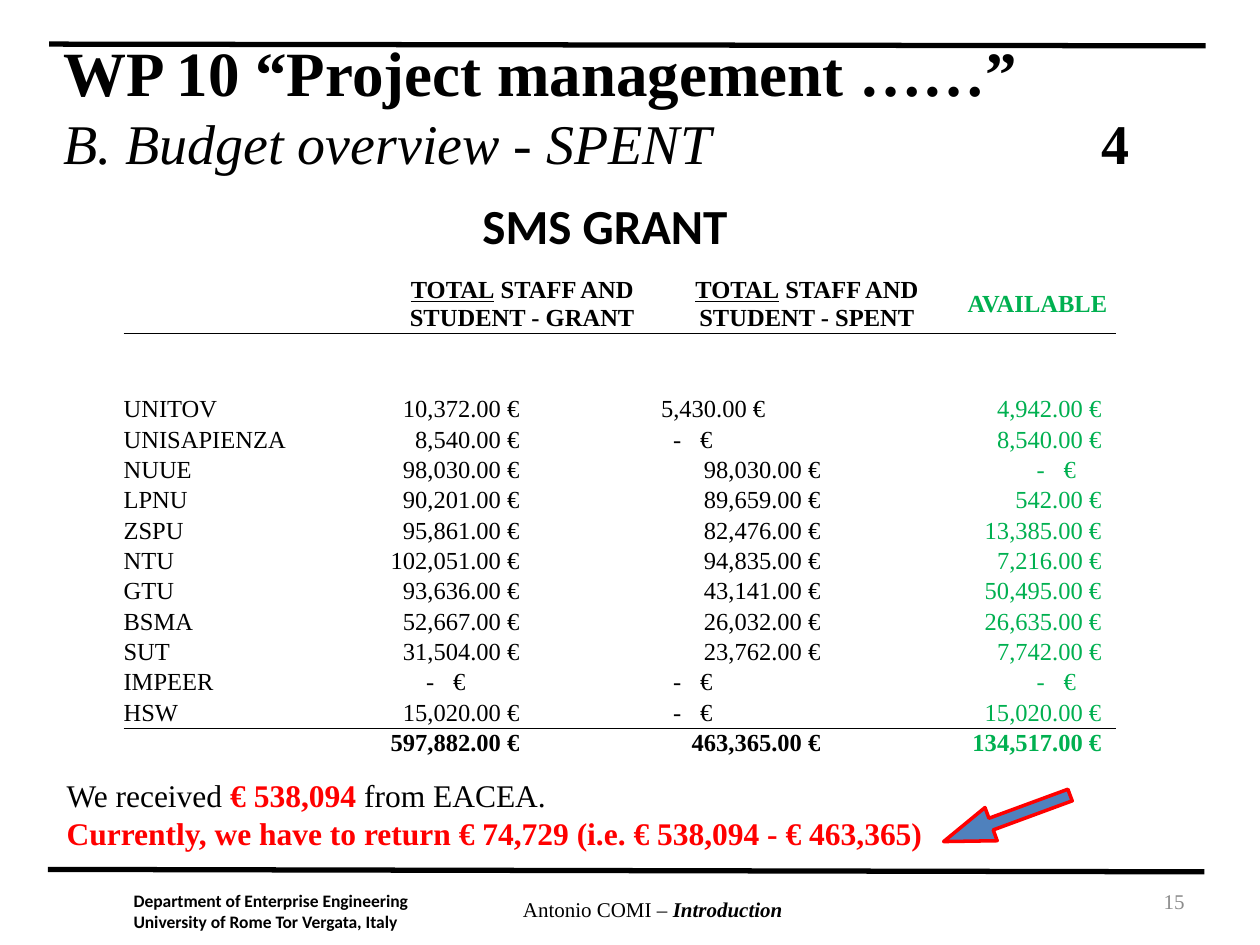
"""Builds the budget overview slide for the project management work package."""
from dataclasses import dataclass

from lxml.etree import SubElement
from pptx import Presentation
from pptx.dml.color import RGBColor
from pptx.enum.shapes import MSO_CONNECTOR, MSO_SHAPE
from pptx.enum.text import MSO_ANCHOR, MSO_AUTO_SIZE, PP_ALIGN
from pptx.oxml.ns import qn
from pptx.util import Pt


@dataclass(frozen=True)
class Theme:
    serif: str = "Times New Roman"
    sans: str = "Calibri"
    black: str = "000000"
    white: str = "FFFFFF"
    red: str = "FF0000"
    green: str = "00B050"
    blue: str = "4F81BD"
    gray: str = "8C8C8C"
    title: int = 36
    subtitle: int = 32
    heading: int = 28
    body: int = 18
    table: int = 14
    footer: int = 12
    small: int = 10


THEME = Theme()
NO_STYLE = "{2D5ABB26-0587-4C30-8999-92F81FD0307C}"
COLUMN_WIDTHS = (151.9, 151.9, 173.5, 90)
ROW_HEIGHTS = (33, 34.8) + (17.34,) * 12
TOP_BORDERS = {1: 1, 13: 0.5}
BOTTOM_BORDERS = {0: 1, 12: 0.5}
RIGHT_MARGINS = (77.5, 79, 8.5)
DASH_MARGINS = (21, 10.3, 44.5)
UNITOV_SPENT_MARGIN = 110.5
EURO_TAB = 15.4
BUDGET = (
    ("UNITOV", 10372, 5430),
    ("UNISAPIENZA", 8540, 0),
    ("NUUE", 98030, 98030),
    ("LPNU", 90201, 89659),
    ("ZSPU", 95861, 82476),
    ("NTU", 102051, 94835),
    ("GTU", 93636, 43141),
    ("BSMA", 52667, 26032),
    ("SUT", 31504, 23762),
    ("IMPEER", 0, 0),
    ("HSW", 15020, 0),
)


class SlideBuilder:
    def __init__(self, slide, theme):
        self.slide = slide
        self.theme = theme

    def run(self, paragraph, text, size, color=None, bold=False, italic=False,
            underline=False, face=None):
        run = paragraph.add_run()
        run.text = text
        font = run.font
        font.name = face or self.theme.serif
        font.size = Pt(size)
        font.color.rgb = RGBColor.from_string(color or self.theme.black)
        font.bold, font.italic, font.underline = bold, italic, underline

    def tab(self, paragraph, position):
        tabs = SubElement(paragraph._p.get_or_add_pPr(), qn("a:tabLst"))
        SubElement(tabs, qn("a:tab"), pos=str(int(Pt(position))), algn="l")

    def rule(self, left, top, right, bottom):
        line = self.slide.shapes.add_connector(
            MSO_CONNECTOR.STRAIGHT, Pt(left), Pt(top), Pt(right), Pt(bottom))
        line.line.color.rgb = RGBColor.from_string(self.theme.black)
        line.line.width = Pt(3)
        SubElement(line._element.spPr, qn("a:effectLst"))

    def title(self, left, top, width, height):
        shape = self.slide.shapes.title
        shape.left, shape.top = Pt(left), Pt(top)
        shape.width, shape.height = Pt(width), Pt(height)
        frame = shape.text_frame
        frame.auto_size = MSO_AUTO_SIZE.NONE
        frame.vertical_anchor = MSO_ANCHOR.MIDDLE
        paragraph = frame.paragraphs[0]
        paragraph.alignment = PP_ALIGN.LEFT
        self.tab(paragraph, 593.3)
        self.run(paragraph, "WP 10 “Project management ……”", self.theme.title, bold=True)
        paragraph.add_line_break()
        self.run(paragraph, "B. Budget overview - SPENT\t", self.theme.subtitle, italic=True)
        self.run(paragraph, "4", self.theme.subtitle, bold=True)

    def text(self, box, lines, align=PP_ALIGN.LEFT, anchor=MSO_ANCHOR.TOP,
             inset=True, fill=None):
        bounds = [Pt(value) for value in box]
        if fill:
            shape = self.slide.shapes.add_shape(MSO_SHAPE.RECTANGLE, *bounds)
            shape.shadow.inherit = False
            shape.fill.solid()
            shape.fill.fore_color.rgb = RGBColor.from_string(fill)
            shape.line.fill.background()
        else:
            shape = self.slide.shapes.add_textbox(*bounds)
        frame = shape.text_frame
        frame.word_wrap = True
        frame.vertical_anchor = anchor
        if not inset:
            frame.margin_left = frame.margin_right = 0
            frame.margin_top = frame.margin_bottom = 0
        for index, runs in enumerate(lines):
            paragraph = frame.add_paragraph() if index else frame.paragraphs[0]
            paragraph.alignment = align
            for words, style in runs:
                self.run(paragraph, words, **style)

    def border(self, cell, side, width):
        line = SubElement(cell._tc.get_or_add_tcPr(), qn(f"a:{side}"), w=str(int(Pt(width))))
        if width:
            fill = SubElement(line, qn("a:solidFill"))
            SubElement(fill, qn("a:srgbClr"), val=self.theme.black)
        else:
            SubElement(line, qn("a:noFill"))

    def amount(self, cell, value, column, bold=False, right=None):
        paragraph = cell.text_frame.paragraphs[0]
        color = self.theme.green if column == 2 else self.theme.black
        if value:
            cell.margin_right = Pt(right or RIGHT_MARGINS[column])
            paragraph.alignment = PP_ALIGN.RIGHT
            text = f"{value:,.2f} €"
        else:
            cell.margin_left = Pt(DASH_MARGINS[column])
            self.tab(paragraph, EURO_TAB)
            text = "-\t€"
        self.run(paragraph, text, self.theme.table, color, bold)

    def table(self, left, top):
        table = self.slide.shapes.add_table(
            len(ROW_HEIGHTS), len(COLUMN_WIDTHS), Pt(left), Pt(top),
            Pt(sum(COLUMN_WIDTHS)), Pt(sum(ROW_HEIGHTS))).table
        table.first_row = table.horz_banding = False
        table._tbl.tblPr.find(qn("a:tableStyleId")).text = NO_STYLE
        for column, width in zip(table.columns, COLUMN_WIDTHS):
            column.width = Pt(width)
        for index, height in enumerate(ROW_HEIGHTS):
            table.rows[index].height = Pt(height)
            for cell in table.rows[index].cells:
                cell.margin_left = cell.margin_right = 0
                cell.margin_top = cell.margin_bottom = 0
                cell.vertical_anchor = MSO_ANCHOR.MIDDLE
                self.border(cell, "lnT", TOP_BORDERS.get(index, 0))
                self.border(cell, "lnB", BOTTOM_BORDERS.get(index, 0))
                cell.fill.background()
        for index, (underlined, rest, color) in enumerate((
                ("TOTAL", " STAFF AND STUDENT - GRANT", self.theme.black),
                ("TOTAL", " STAFF AND STUDENT - SPENT", self.theme.black),
                ("", "AVAILABLE", self.theme.green)), start=1):
            paragraph = table.cell(0, index).text_frame.paragraphs[0]
            paragraph.alignment = PP_ALIGN.CENTER
            if underlined:
                self.run(paragraph, underlined, self.theme.table, color, True, underline=True)
            self.run(paragraph, rest, self.theme.table, color, True)
        for row, (partner, grant, spent) in enumerate(BUDGET, start=2):
            self.run(table.cell(row, 0).text_frame.paragraphs[0], partner, self.theme.table)
            for column, value in enumerate((grant, spent, grant - spent)):
                right = UNITOV_SPENT_MARGIN if (row, column) == (2, 1) else None
                self.amount(table.cell(row, column + 1), value, column, right=right)
        grant, spent = (sum(entry[field] for entry in BUDGET) for field in (1, 2))
        for column, value in enumerate((grant, spent, grant - spent)):
            self.amount(table.cell(13, column + 1), value, column, bold=True)
        for row, column in ((0, 0), (13, 0), *((1, column) for column in range(4))):
            paragraph = table.cell(row, column).text_frame.paragraphs[0]
            SubElement(paragraph._p, qn("a:endParaRPr"), sz=str(self.theme.table * 100))

    def arrow(self, left, top, width, height, rotation):
        shape = self.slide.shapes.add_shape(
            MSO_SHAPE.DOWN_ARROW, Pt(left), Pt(top), Pt(width), Pt(height))
        shape.rotation = rotation
        shape.adjustments[0], shape.adjustments[1] = 0.35, 1.43
        shape.shadow.inherit = False
        shape.fill.solid()
        shape.fill.fore_color.rgb = RGBColor.from_string(self.theme.blue)
        shape.line.color.rgb = RGBColor.from_string(self.theme.red)
        shape.line.width = Pt(2)


def main():
    presentation = Presentation()
    presentation.slide_width, presentation.slide_height = Pt(720), Pt(540)
    builder = SlideBuilder(presentation.slides.add_slide(presentation.slide_layouts[5]), THEME)
    builder.rule(27.4, 496.8, 688.3, 498.2)
    builder.rule(28.1, 25.2, 689, 26.2)
    department = dict(size=THEME.small, bold=True, face=THEME.sans)
    builder.text((76.3, 508.3, 185.8, 24), [
        [("Department of Enterprise Engineering", department)],
        [("University of Rome Tor Vergata, Italy", department)]], inset=False)
    builder.text((229.7, 509, 286.6, 36), [
        [("Antonio COMI – ", dict(size=THEME.footer)),
         ("Introduction", dict(size=THEME.footer, bold=True, italic=True))]], PP_ALIGN.CENTER)
    builder.table(70.6, 157)
    builder.text((516.2, 500.4, 167.8, 28.8), [
        [("15", dict(size=THEME.footer, color=THEME.gray))]], PP_ALIGN.RIGHT, MSO_ANCHOR.MIDDLE)
    builder.title(28.8, 31, 659.5, 57.6)
    builder.text((218.2, 108, 254.9, 41), [
        [("SMS GRANT", dict(size=THEME.heading, bold=True, face=THEME.sans))]], PP_ALIGN.CENTER)
    plain = dict(size=THEME.body)
    alert = dict(size=THEME.body, color=THEME.red, bold=True)
    builder.text((31, 440, 674.6, 51), [
        [("We received ", plain), ("€ 538,094 ", alert), ("from EACEA.", plain)],
        [("Currently, we have to return € 74,729 (i.e. € 538,094 - € 463,365)", alert)],
    ], fill=THEME.white)
    builder.arrow(565.2, 429.1, 20.2, 77, 69.8)
    presentation.save("out.pptx")


if __name__ == "__main__":
    main()
